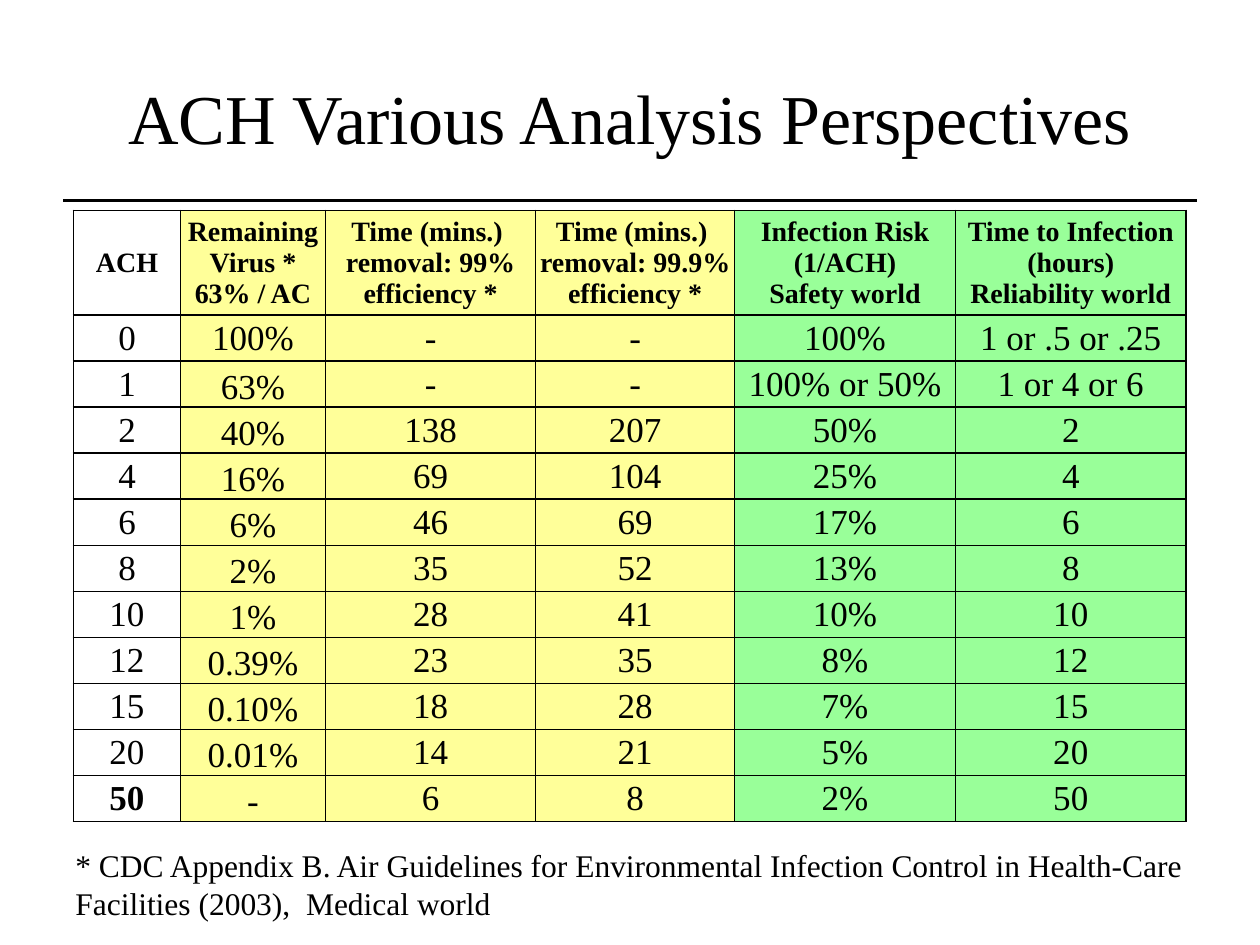
from lxml.etree import SubElement
from pptx import Presentation
from pptx.dml.color import RGBColor
from pptx.enum.shapes import MSO_CONNECTOR
from pptx.enum.text import MSO_ANCHOR, PP_ALIGN
from pptx.oxml import parse_xml
from pptx.oxml.ns import nsdecls, qn
from pptx.util import Cm, Pt

BLACK = RGBColor(0x00, 0x00, 0x00)
YELLOW = RGBColor(0xFF, 0xFF, 0x99)
GREEN = RGBColor(0x99, 0xFF, 0x99)
FONT = "Times New Roman"

COLUMN_WIDTHS = [2.16, 2.92, 4.24, 4.01, 4.45, 4.65]
COLUMN_FILLS = [None, YELLOW, YELLOW, YELLOW, GREEN, GREEN]
HEADER_HEIGHT = 1.98
ROW_HEIGHT = 0.89

# In the texts, \n starts a new paragraph and \v breaks the line within one.
ROWS = [
    ["ACH", "Remaining Virus *\n63% / AC",
     "Time (mins.) \vremoval: 99% efficiency *",
     "Time (mins.) \vremoval: 99.9% efficiency *",
     "Infection Risk\v(1/ACH)\nSafety world",
     "Time to Infection\n(hours)\nReliability world"],
    ["0", "100%", "-", "-", "100%", "1 or .5 or .25"],
    ["1", "63%", "-", "-", "100% or 50%", "1 or 4 or 6"],
    ["2", "40%", "138", "207", "50%", "2"],
    ["4", "16%", "69", "104", "25%", "4"],
    ["6", "6%", "46", "69", "17%", "6"],
    ["8", "2%", "35", "52", "13%", "8"],
    ["10", "1%", "28", "41", "10%", "10"],
    ["12", "0.39%", "23", "35", "8%", "12"],
    ["15", "0.10%", "18", "28", "7%", "15"],
    ["20", "0.01%", "14", "21", "5%", "20"],
    ["50", "-", "6", "8", "2%", "50"],
]


def write_text(text_frame, text, size, alignment, bold=False):
    """Fill an empty text frame, one paragraph per \\n and one run per \\v."""
    for paragraph_index, paragraph_text in enumerate(text.split("\n")):
        if paragraph_index == 0:
            paragraph = text_frame.paragraphs[0]
        else:
            paragraph = text_frame.add_paragraph()
        paragraph.alignment = alignment
        for line_index, line in enumerate(paragraph_text.split("\v")):
            if line_index > 0:
                paragraph.add_line_break()
            run = paragraph.add_run()
            run.text = line
            run.font.name = FONT
            run.font.size = Pt(size)
            run.font.bold = bold
            run.font.color.rgb = BLACK


def add_borders(cell):
    properties = cell._tc.get_or_add_tcPr()
    for position, side in enumerate(("lnL", "lnR", "lnT", "lnB")):
        properties.insert(position, parse_xml(
            f'<a:{side} {nsdecls("a")} w="{Pt(1)}"><a:solidFill>'
            f'<a:srgbClr val="{BLACK}"/></a:solidFill></a:{side}>'))


presentation = Presentation()
presentation.slide_width = Cm(25.4)
presentation.slide_height = Cm(19.05)
slide = presentation.slides.add_slide(presentation.slide_layouts[6])

# Rule under the title
rule = slide.shapes.add_connector(
    MSO_CONNECTOR.STRAIGHT, Cm(1.27), Cm(4.04), Cm(24.13), Cm(4.04))
rule.line.color.rgb = BLACK
rule.line.width = Pt(2)
SubElement(rule._element.spPr, qn("a:effectLst"))

# Title
title = slide.shapes.add_textbox(Cm(1.27), Cm(0.76), Cm(22.86), Cm(3.18))
title.text_frame.word_wrap = True
title.text_frame.vertical_anchor = MSO_ANCHOR.MIDDLE
write_text(title.text_frame, "ACH Various Analysis Perspectives", 40, PP_ALIGN.CENTER)

# Table of air changes per hour
table_height = HEADER_HEIGHT + ROW_HEIGHT * (len(ROWS) - 1)
table = slide.shapes.add_table(
    len(ROWS), len(COLUMN_WIDTHS), Cm(1.48), Cm(4.24),
    Cm(sum(COLUMN_WIDTHS)), Cm(table_height)).table
table.horz_banding = False
for column, width in zip(table.columns, COLUMN_WIDTHS):
    column.width = Cm(width)

for row_index, texts in enumerate(ROWS):
    is_header = row_index == 0
    table.rows[row_index].height = Cm(HEADER_HEIGHT if is_header else ROW_HEIGHT)
    for column_index, (text, fill) in enumerate(zip(texts, COLUMN_FILLS)):
        cell = table.cell(row_index, column_index)
        if fill is None:
            cell.fill.background()
        else:
            cell.fill.solid()
            cell.fill.fore_color.rgb = fill
        add_borders(cell)
        if column_index == 1 and row_index > 1:
            cell.vertical_anchor = MSO_ANCHOR.BOTTOM
            cell.margin_left = cell.margin_right = cell.margin_top = Cm(0.02)
            cell.margin_bottom = Cm(0)
        else:
            cell.vertical_anchor = MSO_ANCHOR.MIDDLE
            cell.margin_left = cell.margin_right = Cm(0.04)
            cell.margin_top = cell.margin_bottom = Cm(0.04)
        is_bold = is_header or (column_index == 0 and text == "50")
        write_text(cell.text_frame, text, 16 if is_header else 20,
                   PP_ALIGN.CENTER, is_bold)

# Footnote
footnote = slide.shapes.add_textbox(Cm(1.27), Cm(16.94), Cm(23.06), Cm(1.8))
footnote.text_frame.word_wrap = True
write_text(
    footnote.text_frame,
    "* CDC Appendix B. Air Guidelines for Environmental Infection Control in "
    "Health-Care Facilities (2003),  Medical world",
    18, PP_ALIGN.LEFT)

presentation.save("out.pptx")
